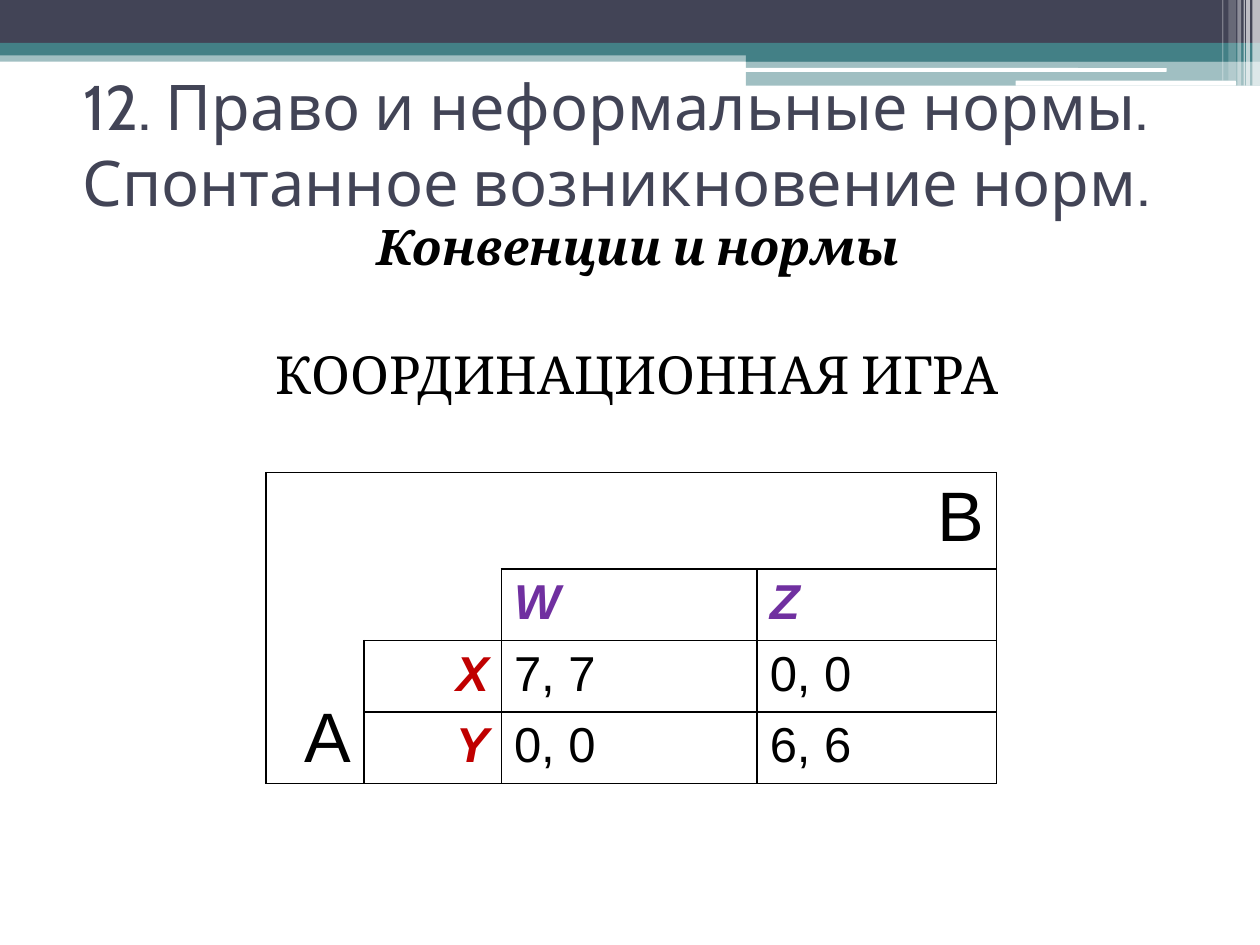
from typing import NamedTuple

from lxml.etree import SubElement
from pptx import Presentation
from pptx.dml.color import RGBColor
from pptx.enum.shapes import MSO_SHAPE as Shape
from pptx.enum.text import MSO_ANCHOR as Anchor, PP_ALIGN as Align
from pptx.oxml.ns import qn
from pptx.util import Emu, Inches, Pt

COLUMNS, ROWS = 100, 75
WIDTH, HEIGHT = Inches(10), Inches(7.5)
NAVY, TEAL, WHITE, BLACK = "424456", "438086", "FFFFFF", "000000"
PURPLE, RED = "7030A0", "C00000"
PLAIN_TABLE = "{2D5ABB26-0587-4C30-8999-92F81FD0307C}"


class Bar(NamedTuple):
    """A header bar placed on the grid, with opacity in percent."""
    left: float
    top: float
    width: float
    height: float
    color: str
    opacity: int = 100
    kind: Shape = Shape.RECTANGLE


class Entry(NamedTuple):
    """A text of the game table."""
    row: int
    col: int
    text: str
    size: int = 28
    color: str = BLACK
    strong: bool = False
    align: Align = Align.LEFT


BARS = [
    Bar(0, 4, 100, 0.9, TEAL, 50),
    Bar(0, 0, 100, 3.4, NAVY),
    Bar(0, 3.4, 100, 1, TEAL),
    Bar(59.2, 3.9, 40.8, 1, TEAL),
    Bar(59.2, 4.8, 40.8, 2, TEAL, 50),
    Bar(59.1, 5.4, 33.5, 0.3, WHITE, kind=Shape.ROUNDED_RECTANGLE),
    Bar(80.6, 6.4, 17.5, 0.4, WHITE, kind=Shape.ROUNDED_RECTANGLE),
    Bar(99.4, 0, 0.6, 6.8, WHITE, 65),
    Bar(98.9, 0, 0.3, 6.8, WHITE, 65),
    Bar(98.7, 0, 0.1, 6.8, WHITE, 60),
    Bar(98.2, 0, 0.3, 6.8, WHITE, 40),
    Bar(97.5, 0, 0.6, 6.4, WHITE, 20),
    Bar(97, 0, 0.1, 6.4, WHITE, 30),
]
TABLE_COLS = [7.8, 10.9, 20.3, 19]
TABLE_ROWS = [7.2, 5.5, 5.4, 5.4]
ENTRIES = [
    Entry(0, 1, "B", 40, align=Align.RIGHT),
    Entry(1, 0, "A", 40, align=Align.RIGHT),
    Entry(1, 2, "W", color=PURPLE, strong=True),
    Entry(1, 3, "Z", color=PURPLE, strong=True),
    Entry(2, 1, "X", color=RED, strong=True, align=Align.RIGHT),
    Entry(2, 2, "7, 7"),
    Entry(2, 3, "0, 0"),
    Entry(3, 1, "Y", color=RED, strong=True, align=Align.RIGHT),
    Entry(3, 2, "0, 0"),
    Entry(3, 3, "6, 6"),
]


def rgb(color: str) -> RGBColor:
    """Turn a hex string into a colour."""
    return RGBColor.from_string(color)


def box(left: float, top: float, width: float, height: float) -> list[Emu]:
    """Turn grid columns and rows into lengths."""
    x, y = WIDTH / COLUMNS, HEIGHT / ROWS
    return [Emu(round(v)) for v in (left * x, top * y, width * x, height * y)]


def style(p, size: int, font: str, color: str, strong: bool = False, align: Align = Align.CENTER) -> None:
    """Format a paragraph and its runs."""
    p.alignment = align
    for r in p.runs:
        r.font.size, r.font.name = Pt(size), font
        r.font.bold = r.font.italic = strong
        r.font.color.rgb = rgb(color)


def draw_bar(slide, bar: Bar) -> None:
    """Draw one header bar."""
    sp = slide.shapes.add_shape(bar.kind, *box(*bar[:4]))
    sp.shadow.inherit = False
    sp.fill.solid()
    sp.fill.fore_color.rgb = rgb(bar.color)
    sp.line.fill.background()
    if bar.opacity < 100:
        fill = sp.fill._xPr.find(qn("a:solidFill"))
        SubElement(fill[0], qn("a:alpha"), val=str(bar.opacity * 1000))


def draw_title(slide, text: str) -> None:
    """Place and format the title in front of the bars."""
    title = slide.shapes.title
    title.left, title.top, title.width, title.height = box(3.9, 5.5, 90, 11.7)
    tf = title.text_frame
    tf.text = text
    tf.word_wrap = True
    tf.vertical_anchor = Anchor.MIDDLE
    style(tf.paragraphs[0], 36, "Cabin", NAVY)
    slide.shapes._spTree.append(title._element)


def draw_headings(slide) -> None:
    """Write the two centred headings above the table."""
    tf = slide.shapes.add_textbox(*box(5, 17.2, 90, 18)).text_frame
    tf.word_wrap = True
    tf.margin_left = Inches(0.22)
    topic, game = tf.paragraphs[0], tf.add_paragraph()
    topic.text, game.text = "Конвенции и нормы", "КООРДИНАЦИОННАЯ ИГРА"
    style(topic, 28, "Cambria", BLACK, True)
    style(game, 30, "Cambria", BLACK)
    topic.line_spacing = 0.9
    game.space_before = Pt(38)


def draw_borders(cell, row: int, col: int) -> None:
    """Frame the game cells and the outer edge of the table."""
    framed = row >= 1 and col >= 1 and row + col >= 3
    sides = {
        "L": col == 0,
        "R": col + cell.span_width == len(TABLE_COLS),
        "T": row == 0,
        "B": row + cell.span_height == len(TABLE_ROWS),
    }
    tc_pr = cell._tc.get_or_add_tcPr()
    for side, outer in sides.items():
        if framed or outer:
            ln = SubElement(tc_pr, qn(f"a:ln{side}"), w=str(Pt(1)))
            SubElement(SubElement(ln, qn("a:solidFill")), qn("a:srgbClr"), val=BLACK)


def draw_table(slide) -> None:
    """Draw the table of the coordination game."""
    place = box(21.1, 37.5, sum(TABLE_COLS), sum(TABLE_ROWS))
    table = slide.shapes.add_table(len(TABLE_ROWS), len(TABLE_COLS), *place).table
    table.first_row = table.horz_banding = False
    table._tbl.tblPr.find(qn("a:tableStyleId")).text = PLAIN_TABLE
    for col, width in zip(table.columns, TABLE_COLS):
        col.width = box(0, 0, width, 0)[2]
    for row, height in zip(table.rows, TABLE_ROWS):
        row.height = box(0, 0, 0, height)[3]
    table.cell(0, 1).merge(table.cell(0, 3))
    table.cell(1, 0).merge(table.cell(3, 0))
    table.cell(1, 0).vertical_anchor = Anchor.BOTTOM
    for row in range(len(TABLE_ROWS)):
        for col in range(len(TABLE_COLS)):
            cell = table.cell(row, col)
            draw_borders(cell, row, col)
            cell.fill.background()
    for e in ENTRIES:
        p = table.cell(e.row, e.col).text_frame.paragraphs[0]
        p.text = e.text
        style(p, e.size, "Arial", e.color, e.strong, e.align)


def main() -> None:
    """Build the slide and save it."""
    prs = Presentation()
    prs.slide_width, prs.slide_height = WIDTH, HEIGHT
    slide = prs.slides.add_slide(prs.slide_layouts[5])
    for bar in BARS:
        draw_bar(slide, bar)
    draw_headings(slide)
    draw_table(slide)
    draw_title(slide, "12. Право и неформальные нормы. Спонтанное возникновение норм.")
    prs.save("out.pptx")


if __name__ == "__main__":
    main()
